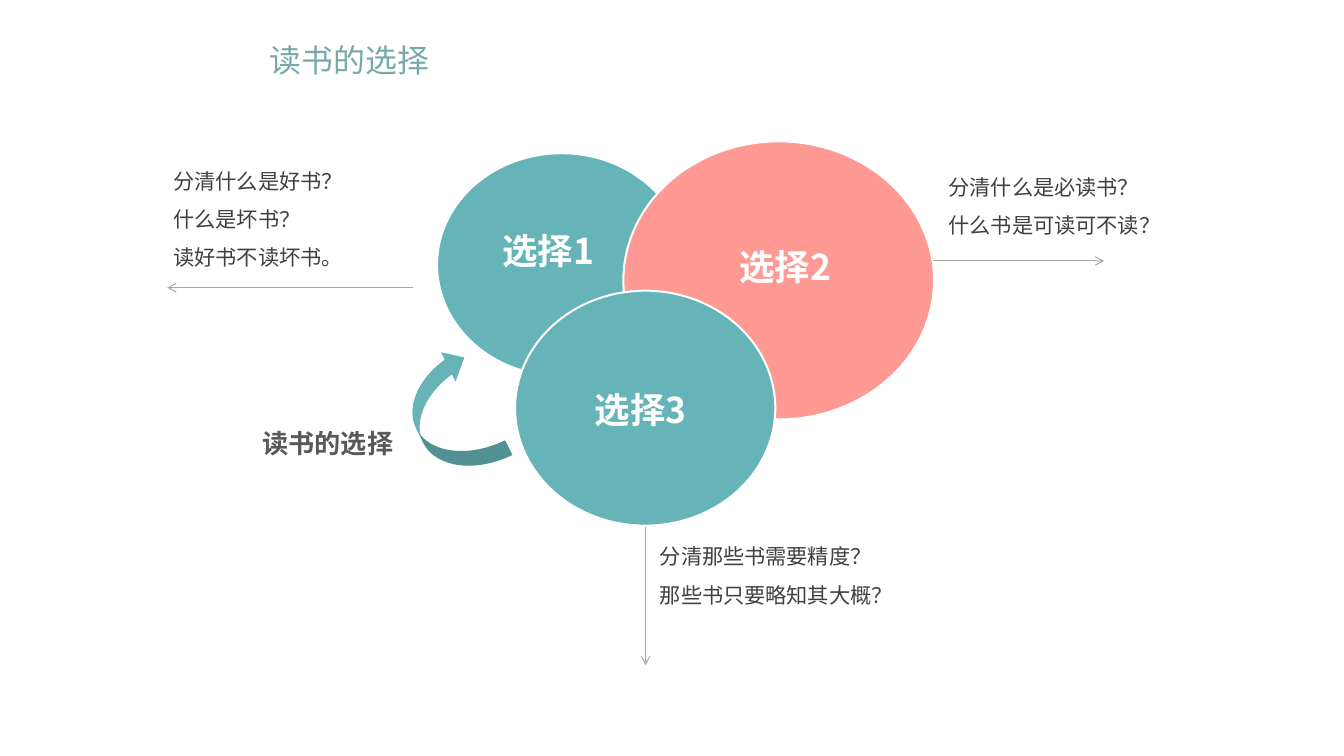
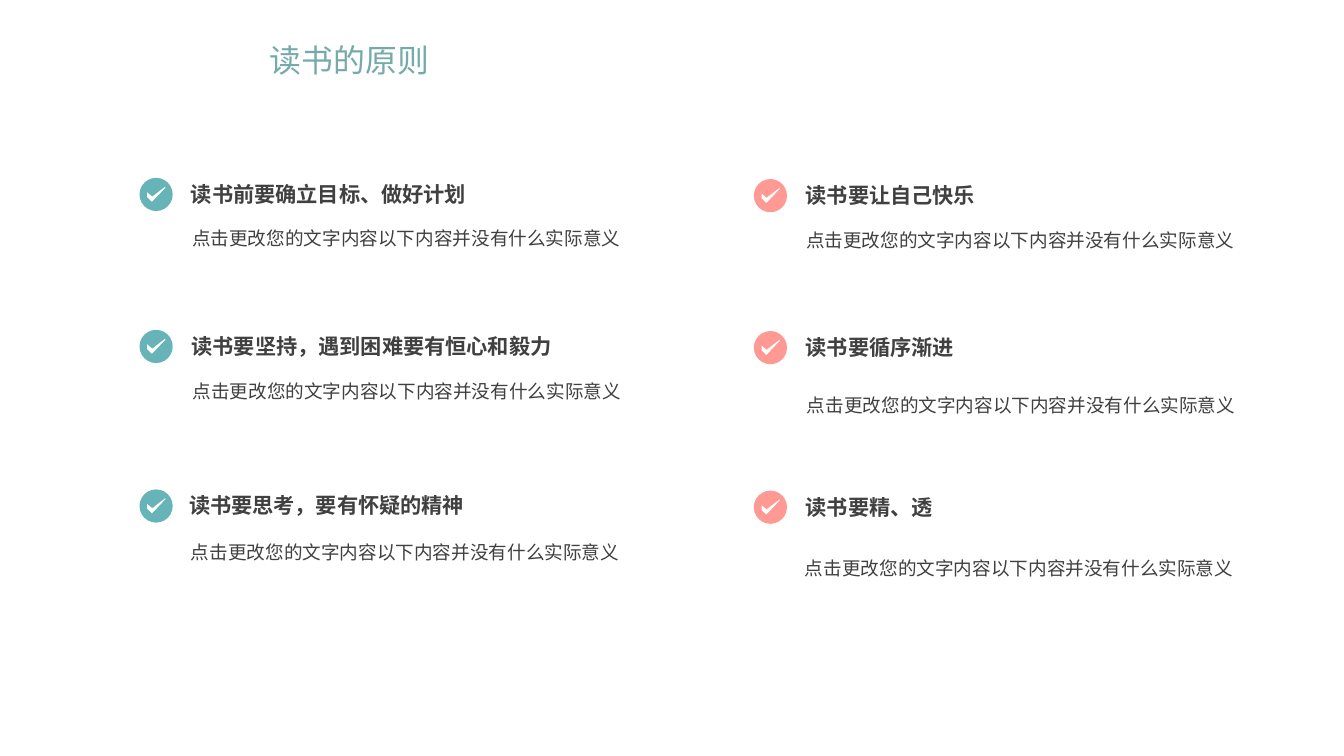
from pptx import Presentation
from pptx import util as u
from pptx.dml.color import RGBColor
from pptx.enum import lang, shapes, text
from pptx.oxml import ns
from lxml import etree

Pt = u.Pt

TEAL = RGBColor(0x66, 0xB4, 0xB8)
CORAL = RGBColor(0xFF, 0x99, 0x93)
TITLE_TEAL = RGBColor(0x76, 0xAA, 0xAA)
WHITE = RGBColor(0xFF, 0xFF, 0xFF)
INK = RGBColor(0x40, 0x40, 0x40)
CAPTION_GREY = RGBColor(0x59, 0x59, 0x59)
LINE_GREY = RGBColor(0xA6, 0xA6, 0xA6)

FONT = "Noto Sans CJK SC"
TITLE_ONLY = 5
ROOMY = (9.6, 4.8, 9.6, 4.8)
DEFAULT_INSETS = (7.2, 3.6, 7.2, 3.6)
DETAIL_INSETS = (0, 3.6, 7.2, 3.6)

TITLE = dict(size=24, color=TITLE_TEAL, anchor=text.MSO_ANCHOR.MIDDLE,
             align=text.PP_ALIGN.JUSTIFY)
NOTE = dict(size=16, color=INK, insets=ROOMY, spacing=1.5, grow=True)
LABEL = dict(size=26.7, color=WHITE, bold=True, insets=ROOMY, grow=True)
CAPTION = dict(size=19.7, color=CAPTION_GREY, bold=True, insets=ROOMY,
               align=text.PP_ALIGN.CENTER, grow=True)
HEADING = dict(size=16, color=INK, bold=True, anchor=text.MSO_ANCHOR.MIDDLE)
DETAIL = dict(size=14, color=INK, insets=DETAIL_INSETS,
              anchor=text.MSO_ANCHOR.MIDDLE)

BADGE = 25
TICK = [(5.8, 14.5), (9.4, 18), (19.5, 7.4), (19.5, 6.6), (9.6, 14.2), (5.8, 11)]
DETAIL_TEXT = "点击更改您的文字内容以下内容并没有什么实际意义"


def apply(target, values):
    for name, value in values.items():
        setattr(target, name, value)


def points(values):
    return [Pt(value) for value in values]


class Deck:
    def __init__(self, width, height):
        self.prs = Presentation()
        apply(self.prs, dict(slide_width=Pt(width), slide_height=Pt(height)))
        self.slide = None

    def new_slide(self, title):
        self.slide = self.prs.slides.add_slide(self.prs.slide_layouts[TITLE_ONLY])
        heading = self.slide.shapes.title
        left, top, width, height = points((196, 26.5, 178, 37.5))
        apply(heading, dict(left=left, top=top, width=width, height=height))
        self.set_text(heading, [title], **TITLE)

    def set_text(self, holder, lines, size, color, bold=False, align=text.PP_ALIGN.LEFT,
                 anchor=text.MSO_ANCHOR.TOP, insets=DEFAULT_INSETS, spacing=1.0, grow=False):
        frame = holder.text_frame
        left, top, right, bottom = points(insets)
        fit = text.MSO_AUTO_SIZE
        apply(frame, dict(margin_left=left, margin_top=top, margin_right=right,
                          margin_bottom=bottom, word_wrap=True, vertical_anchor=anchor,
                          auto_size=fit.SHAPE_TO_FIT_TEXT if grow else fit.NONE))
        for index, line in enumerate(lines):
            paragraph = frame.add_paragraph() if index else frame.paragraphs[0]
            apply(paragraph, dict(alignment=align, line_spacing=spacing))
            run = paragraph.add_run()
            run.text = line
            apply(run.font, dict(size=Pt(size), bold=bold, name=FONT,
                                 language_id=lang.MSO_LANGUAGE_ID.SIMPLIFIED_CHINESE))
            run.font.color.rgb = color
            east_asian = etree.Element(ns.qn("a:ea"), typeface=FONT)
            run._r.get_or_add_rPr().find(ns.qn("a:latin")).addnext(east_asian)

    def text(self, box, lines, **style):
        self.set_text(self.slide.shapes.add_textbox(*points(box)), lines, **style)

    def paint(self, shape, fill, outline=0):
        """Fill a shape; give it a white outline of that width, or none."""
        shape.shadow.inherit = False
        shape.fill.solid()
        shape.fill.fore_color.rgb = fill
        if outline:
            shape.line.color.rgb = WHITE
            shape.line.width = Pt(outline)
        else:
            shape.line.fill.background()

    def shape(self, kind, box, fill, outline=0, parent=None):
        added = (parent or self.slide).shapes.add_shape(kind, *points(box))
        self.paint(added, fill, outline)
        return added

    def arrow(self, *ends):
        connector = self.slide.shapes.add_connector(
            shapes.MSO_CONNECTOR.STRAIGHT, *points(ends))
        connector.line.color.rgb = LINE_GREY
        connector.line.width = Pt(0.75)
        etree.SubElement(connector.line._get_or_add_ln(), ns.qn("a:tailEnd"), type="arrow")
        etree.SubElement(connector._element.spPr, ns.qn("a:effectLst"))

    def check_badge(self, left, top, fill):
        group = self.slide.shapes.add_group_shape()
        self.shape(shapes.MSO_SHAPE.OVAL, (left, top, BADGE, BADGE), fill, parent=group)
        corners = [points((left + x, top + y)) for x, y in TICK]
        outline = group.shapes.build_freeform(*corners[0])
        outline.add_line_segments(corners[1:], close=True)
        self.paint(outline.convert_to_shape(), WHITE)


def choices_slide(deck):
    deck.new_slide("读书的选择")
    for ends in [(662.4, 196.6, 831.6, 196.6), (486.3, 397, 486.3, 501),
                 (311, 216.7, 126, 216.7)]:
        deck.arrow(*ends)

    circles = [((329, 115.2, 188, 168.5), TEAL, 2),
               ((469.5, 106.5, 234, 209.5), CORAL, 1.5),
               ((388, 219, 196, 177), TEAL, 1.5)]
    for box, fill, outline in circles:
        deck.shape(shapes.MSO_SHAPE.OVAL, box, fill, outline)

    notes = [((704.9, 116.6, 204.5, 62.6), ["分清什么是必读书？", "什么书是可读可不读？"]),
             ((487.4, 395.3, 239, 62.6), ["分清那些书需要精度？", "那些书只要略知其大概？"]),
             ((121, 112.3, 204.5, 92.2),
              ["分清什么是好书？", "什么是坏书？", "读好书不读坏书。"])]
    for box, lines in notes:
        deck.text(box, lines, **NOTE)

    label_places = [(368.6, 167.8, 117.4), (547.2, 180, 134.6), (438.5, 287.3, 97.2)]
    for number, place in enumerate(label_places, 1):
        deck.text((*place, 41.8), [f"选择{number}"], **LABEL)

    cycle = deck.shape(shapes.MSO_SHAPE.CURVED_LEFT_ARROW, (311.8, 265.7, 56.2, 94.3), TEAL)
    cycle.rotation = 153.8
    for index, value in enumerate((0.22, 0.44, 0.25)):
        cycle.adjustments[index] = value
    deck.text((172, 316.8, 149.8, 33.8), ["读书的选择"], **CAPTION)


def principles_slide(deck):
    deck.new_slide("读书的原则")
    row_tops = (134, 248.5, 368.7)
    # Each principle: heading, its left offset, detail left offset and centre, line spacing
    columns = [
        (105.1, 0, TEAL, [("读书前要确立目标、做好计划", 31.7, 39.6, 45.7, 1),
                          ("读书要坚持，遇到困难要有恒心和毅力", 32.2, 40, 46.4, 1),
                          ("读书要思考，要有怀疑的精神", 30.2, 38.7, 47.2, 1)]),
        (567.8, 0.9, CORAL, [("读书要让自己快乐", 32, 39.3, 46.2, 1),
                             ("读书要循序渐进", 32, 40, 51.5, 1.5),
                             ("读书要精、透", 32, 38.5, 53.8, 1.5)]),
    ]
    for left, drop, fill, principles in columns:
        for row_top, principle in zip(row_tops, principles):
            heading, heading_x, detail_x, detail_centre, spacing = principle
            top = row_top + drop
            deck.check_badge(left, top, fill)
            deck.text((left + heading_x, top - 0.5, 310, BADGE), [heading], **HEADING)
            deck.text((left + detail_x, top + detail_centre - 24, 345, 48),
                      [DETAIL_TEXT], spacing=spacing, **DETAIL)


def main():
    deck = Deck(1012.3, 569.5)
    choices_slide(deck)
    principles_slide(deck)
    deck.prs.save("out.pptx")


if __name__ == "__main__":
    main()
